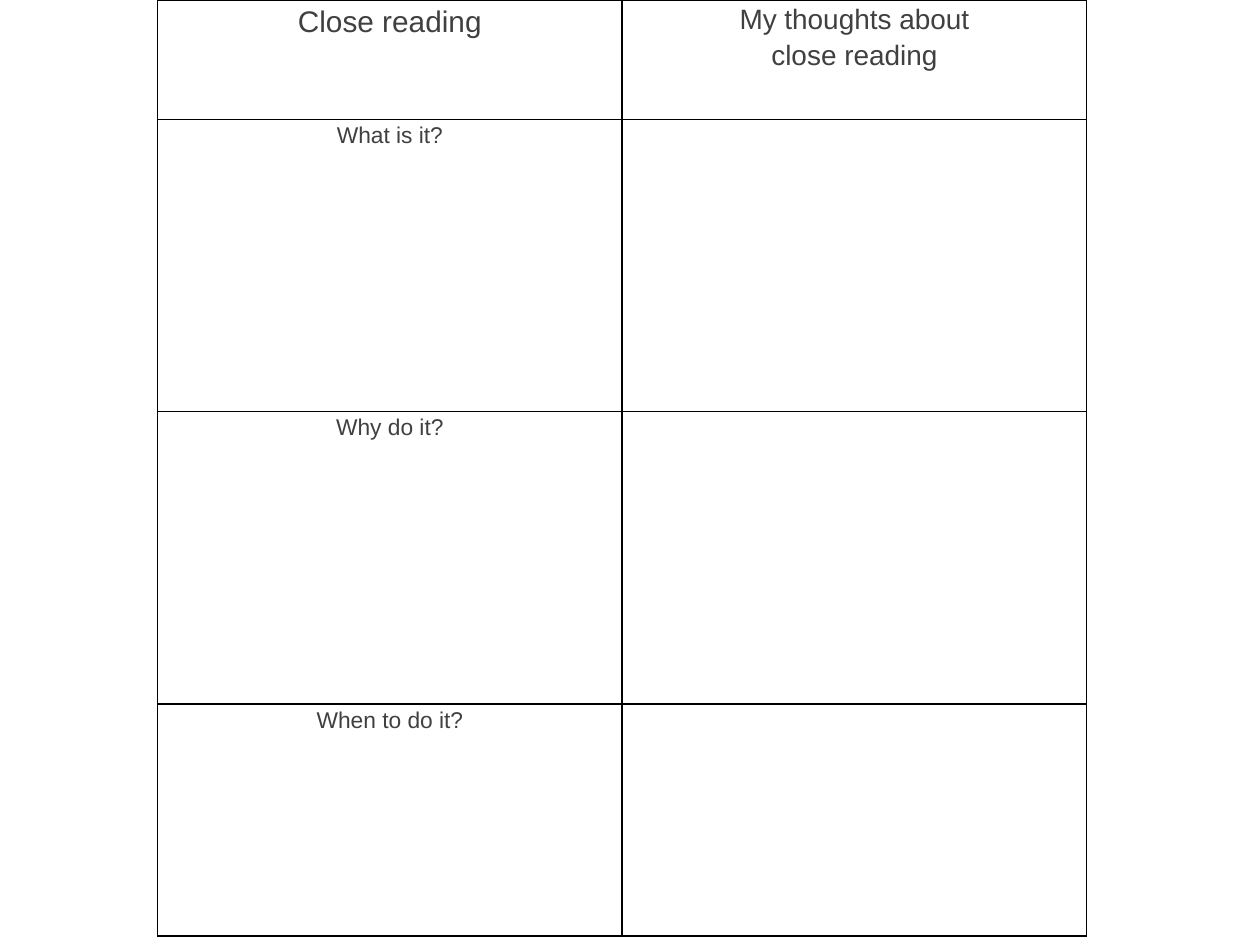
import pptx
import pptx.dml.color
import pptx.enum.text
import pptx.oxml
import pptx.oxml.ns
import pptx.util

Pt = pptx.util.Pt
BLACK = pptx.dml.color.RGBColor(0x00, 0x00, 0x00)
GRAY = pptx.dml.color.RGBColor(0x40, 0x40, 0x40)
COLUMN_WIDTH = 265.5
ROW_HEIGHTS = [68.25, 167, 167, 132.75]
ROWS = [
    [("Close reading", 17), ("My thoughts about\nclose reading", 16)],
    [("What is it?", 13), ("", 13)],
    [("Why do it?", 13), ("", 13)],
    [("When to do it?", 13), ("", 13)],
]


def add_borders(cell):
    """Draw a thin black line on every side of a cell."""
    tc_pr = cell._tc.get_or_add_tcPr()
    for i, side in enumerate(("lnL", "lnR", "lnT", "lnB")):
        tc_pr.insert(i, pptx.oxml.parse_xml(
            f'<a:{side} {pptx.oxml.ns.nsdecls("a")} w="{Pt(1)}"><a:solidFill>'
            f'<a:srgbClr val="{BLACK}"/></a:solidFill></a:{side}>'))


def fill_cell(cell, text, size):
    """Write centred text in a cell and set its format."""
    margins = {"margin_left": Pt(4.5), "margin_right": Pt(4.5),
               "margin_top": Pt(0), "margin_bottom": Pt(0)}
    for name, value in margins.items():
        setattr(cell, name, value)
    cell.fill.background()
    add_borders(cell)
    cell.text = text
    for p in cell.text_frame.paragraphs:
        p.alignment = pptx.enum.text.PP_ALIGN.CENTER
        p.line_spacing = 1.15
        font = {"name": "Arial", "size": Pt(size), "bold": False}
        for name, value in font.items():
            setattr(p.font, name, value)
        p.font.color.rgb = GRAY
        for r in p.runs:
            for name, value in font.items():
                setattr(r.font, name, value)
            r.font.color.rgb = GRAY


def add_notes_table(s):
    """Add the two-column reading table."""
    table = s.shapes.add_table(
        len(ROWS), 2, Pt(90), Pt(0),
        Pt(2 * COLUMN_WIDTH), Pt(sum(ROW_HEIGHTS))).table
    table.horz_banding = False
    table.first_row = False
    for column in table.columns:
        column.width = Pt(COLUMN_WIDTH)
    for i, (height, row) in enumerate(zip(ROW_HEIGHTS, ROWS)):
        table.rows[i].height = Pt(height)
        for j, (text, size) in enumerate(row):
            fill_cell(table.cell(i, j), text, size)


def main():
    """Build and save the slide."""
    prs = pptx.Presentation()
    prs.slide_width, prs.slide_height = Pt(720), Pt(540)
    s = prs.slides.add_slide(prs.slide_layouts[6])
    add_notes_table(s)
    prs.save("out.pptx")


if __name__ == "__main__":
    main()
